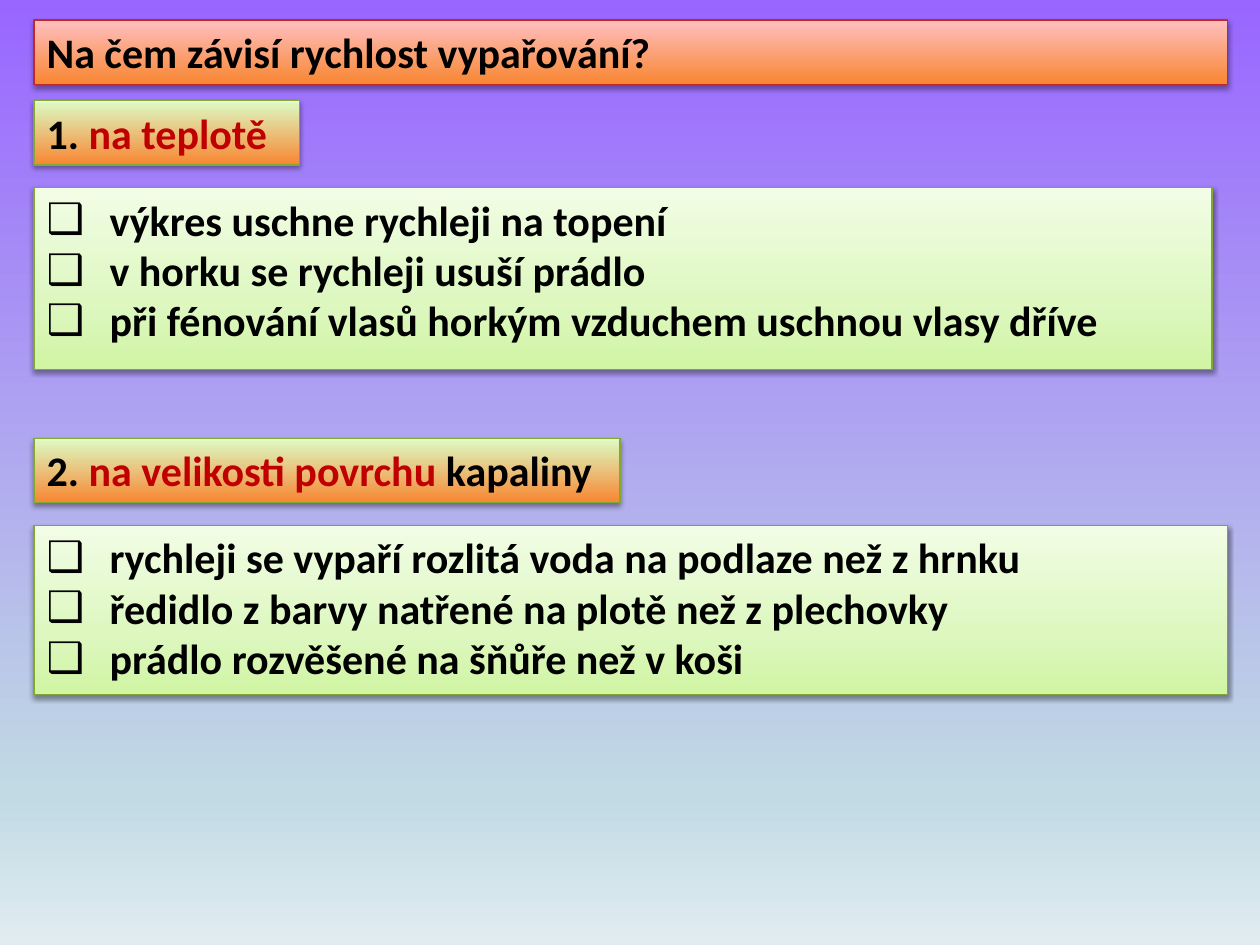
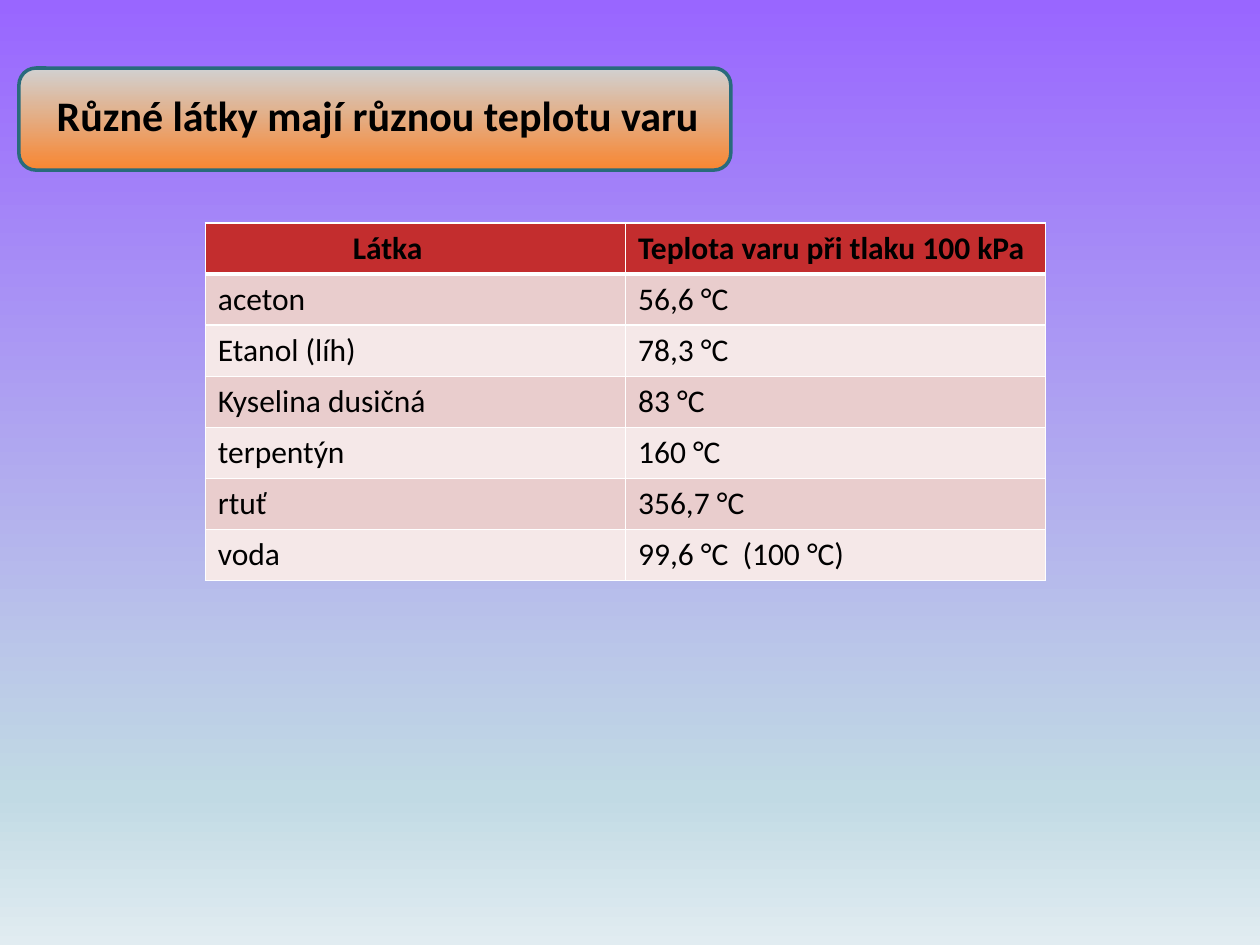
"""Builds two slides about evaporation rate and boiling points."""
import copy

import lxml.etree
import pptx
import pptx.dml.color
import pptx.enum.shapes
import pptx.enum.text
import pptx.oxml.ns
import pptx.util

Inches = pptx.util.Inches
Pt = pptx.util.Pt
qn = pptx.oxml.ns.qn

FONT = "Calibri"
BLACK, RED, WHITE = "000000", "C00000", "FFFFFF"
GREEN_LINE, RED_LINE, TEAL_LINE = "82A92F", "C22829", "296B7C"
HEADER_FILL, ROW_FILLS = "C32D2E", ("E9CDCD", "F5E8E8")
UP, DOWN = 90, 270
SKY = [(0, "9966FF"), (84, "C1DAE4"), (100, "E1ECF1")]
PEACH = [(0, "F88631"), (98, "FFBEBE"), (100, "FFE6E6")]
ORANGE_GREEN = [(0, "F88631"), (96, "DDF7BF"), (100, "F2FDE6")]
GREEN = [(0, "D0F5A3"), (35, "DDF7BF"), (100, "F2FDE6")]
ORANGE_GREY = [(0, "F88631"), (100, "D1D1D1")]

LEFT, BAR_HEIGHT, LIST_OFFSET = 0.27, 0.51, 0.69
QUESTION = "Na čem závisí rychlost vypařování?"
FACTORS = [
    {
        "top": 0.8, "heading_width": 2.11, "list_size": (9.35, 1.44),
        "heading": [("1. ", BLACK), ("na teplotě", RED)],
        "examples": [
            "výkres uschne rychleji na topení",
            "v horku se rychleji usuší prádlo",
            "při fénování vlasů horkým vzduchem uschnou vlasy dříve",
        ],
    },
    {
        "top": 3.48, "heading_width": 4.65, "list_size": (9.47, 1.34),
        "heading": [("2. ", BLACK), ("na velikosti povrchu ", RED), ("kapaliny", BLACK)],
        "examples": [
            "rychleji se vypaří rozlitá voda na podlaze než z hrnku",
            "ředidlo z barvy natřené na plotě než z plechovky",
            "prádlo rozvěšené na šňůře než v koši",
        ],
    },
]
BOILING_TITLE = "Různé látky mají různou teplotu varu"
BOILING_POINTS = [
    ("Látka", "Teplota varu při tlaku 100 kPa"),
    ("aceton", "56,6 °C"),
    ("Etanol (líh)", "78,3 °C"),
    ("Kyselina dusičná", "83 °C"),
    ("terpentýn", "160 °C"),
    ("rtuť", "356,7 °C"),
    ("voda", "99,6 °C  (100 °C)"),
]


def color(value):
    return pptx.dml.color.RGBColor.from_string(value)


def child(parent, tag, **attributes):
    return lxml.etree.SubElement(parent, qn(tag), **attributes)


def fill_gradient(owner, fill, stops, angle):
    fill.gradient()
    fill.gradient_angle = angle
    stop_list = owner.element.find(".//" + qn("a:gsLst"))
    while len(stop_list) < len(stops):
        stop_list.append(copy.deepcopy(stop_list[0]))
    for stop, (position, value) in zip(fill.gradient_stops, stops):
        stop.position = position / 100
        stop.color.rgb = color(value)


def place(shape, left, top, width, height):
    shape.left, shape.top = Inches(left), Inches(top)
    shape.width, shape.height = Inches(width), Inches(height)


def style_panel(shape, stops, line, line_width):
    fill_gradient(shape, shape.fill, stops, UP)
    shape.line.color.rgb = color(line)
    shape.line.width = Pt(line_width)
    shape.shadow.inherit = False


def add_shadow(shape):
    effects = shape.element.spPr.find(qn("a:effectLst"))
    shadow = child(effects, "a:outerShdw", blurRad=str(Pt(3.1)), dist=str(Pt(1.6)),
                   dir="5400000", rotWithShape="0")
    child(child(shadow, "a:srgbClr", val=BLACK), "a:alpha", val="38000")


def write_paragraph(paragraph, runs, size=24, bold=True):
    paragraph.alignment = pptx.enum.text.PP_ALIGN.LEFT
    paragraph.space_before = Pt(0)
    paragraph.font.name = FONT
    paragraph.font.size = Pt(size)
    paragraph.font.bold = bold
    for text, value in runs:
        run = paragraph.add_run()
        run.text = text
        run.font.color.rgb = color(value)


def write_lines(shape, lines, bullet=None):
    frame = shape.text_frame
    frame.word_wrap = True
    frame.auto_size = pptx.enum.text.MSO_AUTO_SIZE.NONE
    frame.vertical_anchor = pptx.enum.text.MSO_ANCHOR.TOP
    for index, runs in enumerate(lines):
        paragraph = frame.add_paragraph() if index else frame.paragraphs[0]
        write_paragraph(paragraph, runs)
        if bullet:
            properties = paragraph._p.get_or_add_pPr()
            properties.set("marL", str(Inches(0.5)))
            properties.set("indent", str(-Inches(0.5)))
            mark = child(properties, "a:buChar", char=bullet)
            properties.find(qn("a:defRPr")).addprevious(mark)


def build_box(shape, box, stops, line, lines, bullet=None):
    place(shape, *box)
    style_panel(shape, stops, line, 0.75)
    add_shadow(shape)
    write_lines(shape, lines, bullet)


def build_factors(presentation):
    slide = presentation.slides.add_slide(presentation.slide_layouts.get_by_name("Comparison"))
    title, *bodies = slide.placeholders
    build_box(title, (LEFT, 0.16, 9.47, BAR_HEIGHT), PEACH, RED_LINE, [[(QUESTION, BLACK)]])
    for factor, heading, examples in zip(FACTORS, bodies[::2], bodies[1::2]):
        top = factor["top"]
        build_box(heading, (LEFT, top, factor["heading_width"], BAR_HEIGHT),
                  ORANGE_GREEN, GREEN_LINE, [factor["heading"]])
        build_box(examples, (LEFT, top + LIST_OFFSET, *factor["list_size"]), GREEN,
                  GREEN_LINE, [[(text, BLACK)] for text in factor["examples"]], "❑")


def style_cell(cell, row):
    properties = cell._tc.get_or_add_tcPr()
    widths = {"L": 1, "R": 1, "T": 3 if row == 1 else 1, "B": 1 if row else 3}
    for side, width in widths.items():
        border = child(properties, "a:ln" + side, w=str(Pt(width)))
        child(child(border, "a:solidFill"), "a:srgbClr", val=WHITE)
    cell.fill.solid()
    cell.fill.fore_color.rgb = color(ROW_FILLS[(row - 1) % 2] if row else HEADER_FILL)


def build_boiling_points(presentation):
    slide = presentation.slides.add_slide(presentation.slide_layouts.get_by_name("Title Only"))
    title = slide.shapes.title
    place(title, 0.35, 0.66, 7.8, 0.5)
    write_lines(title, [[(BOILING_TITLE, BLACK)]])
    panel = slide.shapes.add_shape(
        pptx.enum.shapes.MSO_SHAPE.ROUNDED_RECTANGLE,
        Inches(0.15), Inches(0.54), Inches(5.65), Inches(0.81))
    style_panel(panel, ORANGE_GREY, TEAL_LINE, 2)
    title.element.addprevious(panel.element)

    table = slide.shapes.add_table(
        len(BOILING_POINTS), 2, Inches(1.63), Inches(1.77), Inches(6.67), Inches(2.84)).table
    for row, texts in enumerate(BOILING_POINTS):
        for column, text in enumerate(texts):
            cell = table.cell(row, column)
            style_cell(cell, row)
            write_paragraph(cell.text_frame.paragraphs[0], [(text, BLACK)], 18, row == 0)
    table.cell(0, 0).margin_left = Inches(1.17)


def main():
    presentation = pptx.Presentation()
    presentation.slide_width, presentation.slide_height = Inches(10), Inches(7.5)
    master = presentation.slide_master
    fill_gradient(master, master.background.fill, SKY, DOWN)
    build_factors(presentation)
    build_boiling_points(presentation)
    presentation.save("out.pptx")


if __name__ == "__main__":
    main()
